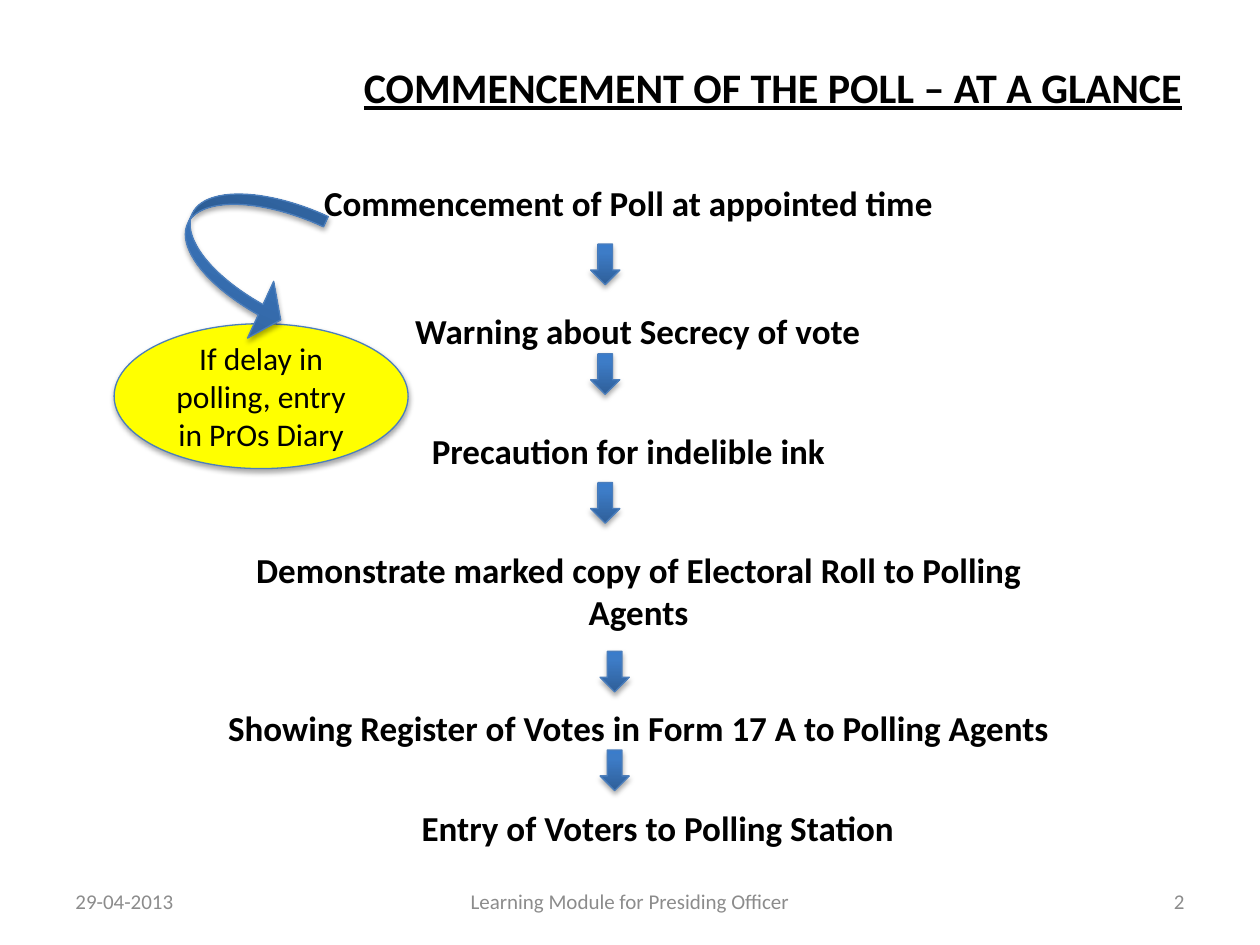
from copy import deepcopy
from typing import NamedTuple

from pptx import Presentation
from pptx.dml.color import RGBColor
from pptx.enum.shapes import MSO_SHAPE
from pptx.enum.text import MSO_ANCHOR, PP_ALIGN
from pptx.oxml import parse_xml
from pptx.oxml.ns import nsdecls, qn
from pptx.util import Pt

COLORS = {
    "text": "000000", "footer": "8C8C8C", "note": "FFFF00", "line": "4B7EBC",
    "dark": "2F5F99", "mid": "3D7CC7", "light": "3A7CCB", "shadow": "000000",
}
GRADIENT = [(0, "dark"), (0.8, "mid"), (1, "light")]
FORMATS = {
    "title": {"size": Pt(24), "bold": True, "underline": True},
    "step": {"size": Pt(20), "bold": True},
    "note": {"size": Pt(18), "bold": False},
    "footer": {"size": Pt(12), "bold": False},
}
STEP_WIDTH = 508.3
ARROW_SIZE = (16.7, 23.2)


class Box(NamedTuple):
    left: float
    top: float
    width: float
    height: float


class Step(NamedTuple):
    text: str
    left: float
    top: float
    height: float = 31.5


class Footer(NamedTuple):
    text: str
    left: float
    width: float
    align: PP_ALIGN


STEPS = [
    Step("Commencement of Poll at appointed time", 105, 100),
    Step("Warning about Secrecy of vote", 110.3, 173.5),
    Step("Precaution for indelible ink", 105, 241.8),
    Step("Demonstrate marked copy of Electoral Roll to Polling Agents", 110.8, 309.8, 55.4),
    Step("Showing Register of Votes in Form 17 A to Polling Agents", 110.8, 400.2),
    Step("Entry of Voters to Polling Station", 121.8, 457.2),
]
ARROWS = [(337.5, 139.5), (337.5, 202.2), (337.5, 275.8), (342.9, 372.2), (342.9, 428.6)]
FOOTERS = [
    Footer("29-04-2013", 36, 168, PP_ALIGN.LEFT),
    Footer("Learning Module for Presiding Officer", 246, 228, PP_ALIGN.CENTER),
    Footer("2", 516, 168, PP_ALIGN.RIGHT),
]


def rgb(name: str) -> RGBColor:
    return RGBColor.from_string(COLORS[name])


def points(box: Box) -> list:
    return [Pt(v) for v in box]


def write(sp, text: str, style: str, align: PP_ALIGN, anchor=MSO_ANCHOR.TOP, color="text") -> None:
    tf = sp.text_frame
    tf.word_wrap = True
    tf.vertical_anchor = anchor
    p = tf.paragraphs[0]
    p.alignment = align
    r = p.add_run()
    r.text = text
    r.font.name = "Calibri"
    r.font.color.rgb = rgb(color)
    for name, value in FORMATS[style].items():
        setattr(r.font, name, value)


def add_text(s, box: Box, *args) -> None:
    write(s.shapes.add_textbox(*points(box)), *args)


def add_shadowed(s, kind: MSO_SHAPE, box: Box):
    sp = s.shapes.add_shape(kind, *points(box))
    sp.line.color.rgb = rgb("line")
    sp.line.width = Pt(0.75)
    sp.shadow.inherit = False
    sp._element.spPr.find(qn("a:effectLst")).append(parse_xml(
        f'<a:outerShdw {nsdecls("a")} blurRad="{Pt(3.1)}" dist="{Pt(1.8)}" dir="5400000" rotWithShape="0">'
        f'<a:srgbClr val="{COLORS["shadow"]}"><a:alpha val="35000"/></a:srgbClr></a:outerShdw>'))
    return sp


def add_arrow(s, kind: MSO_SHAPE, box: Box):
    sp = add_shadowed(s, kind, box)
    sp.fill.gradient()
    sp.fill.gradient_angle = 90
    stop_list = sp._element.spPr.find(qn("a:gradFill")).find(qn("a:gsLst"))
    stop_list.append(deepcopy(stop_list[-1]))
    for stop, (position, color) in zip(sp.fill.gradient_stops, GRADIENT):
        stop.position = position
        stop.color.rgb = rgb(color)
    return sp


def main() -> None:
    prs = Presentation()
    prs.slide_width, prs.slide_height = Pt(720), Pt(540)
    s = prs.slides.add_slide(prs.slide_layouts[5])

    title = s.shapes.title
    title.left, title.top, title.width, title.height = points(Box(25.2, 31.7, 657.4, 568))
    write(title, "COMMENCEMENT OF THE POLL – AT A GLANCE", "title", PP_ALIGN.RIGHT)

    for f in FOOTERS:
        add_text(s, Box(f.left, 500.5, f.width, 28.8), f.text, "footer", f.align,
                 MSO_ANCHOR.MIDDLE, "footer")
    for step in STEPS:
        add_text(s, Box(step.left, step.top, STEP_WIDTH, step.height), step.text,
                 "step", PP_ALIGN.CENTER)
    for left, top in ARROWS:
        add_arrow(s, MSO_SHAPE.DOWN_ARROW, Box(left, top, *ARROW_SIZE))

    note = add_shadowed(s, MSO_SHAPE.OVAL, Box(65.2, 185, 168, 82.8))
    note.fill.solid()
    note.fill.fore_color.rgb = rgb("note")
    write(note, "If delay in polling, entry in PrOs Diary", "note", PP_ALIGN.CENTER, MSO_ANCHOR.MIDDLE)

    curve = add_arrow(s, MSO_SHAPE.CURVED_RIGHT_ARROW, Box(102.2, 105.1, 71.3, 82.8))
    curve.rotation = 24.7
    for i, value in enumerate((0.09, 0.5, 0.18)):
        curve.adjustments[i] = value

    prs.save("out.pptx")


if __name__ == "__main__":
    main()
